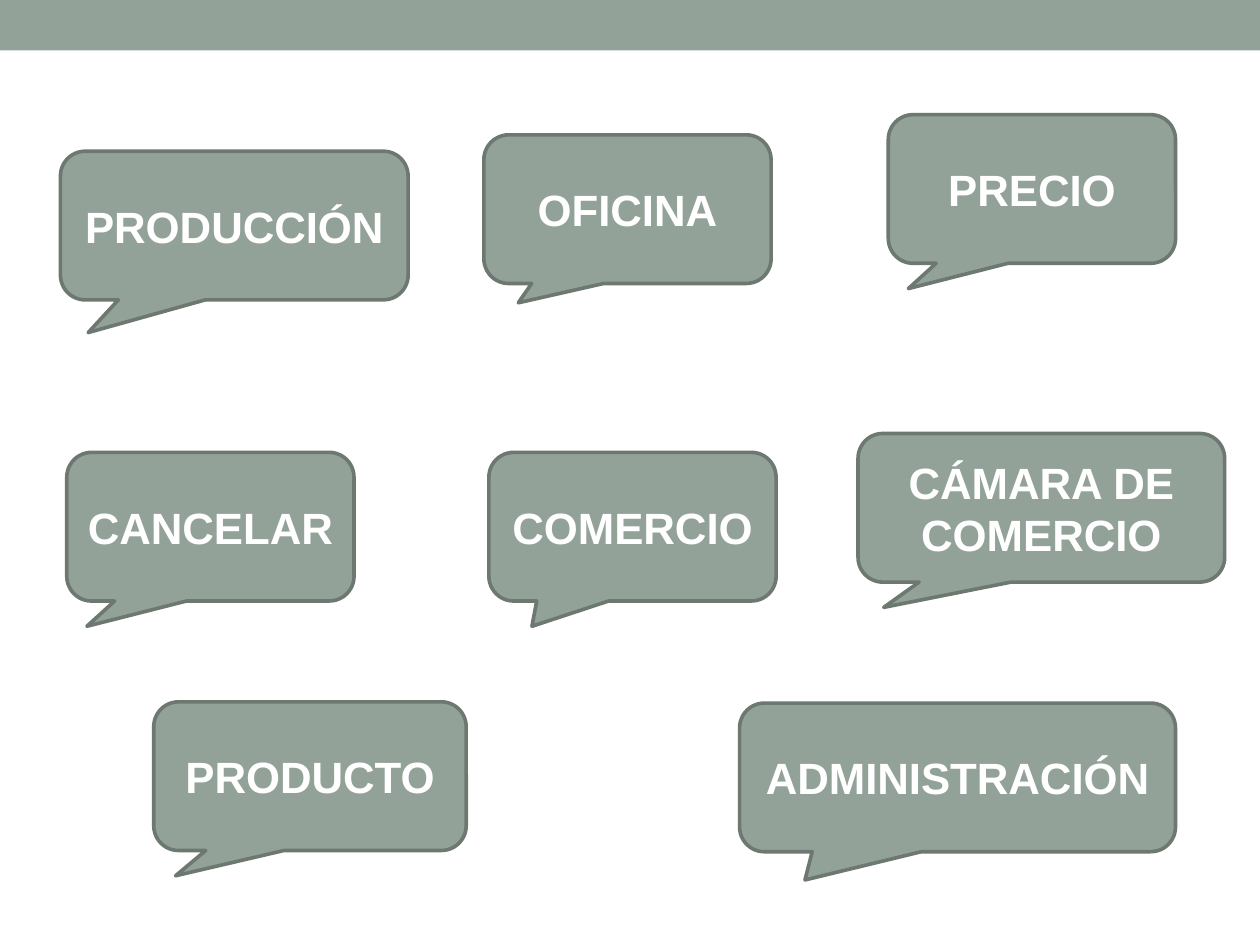
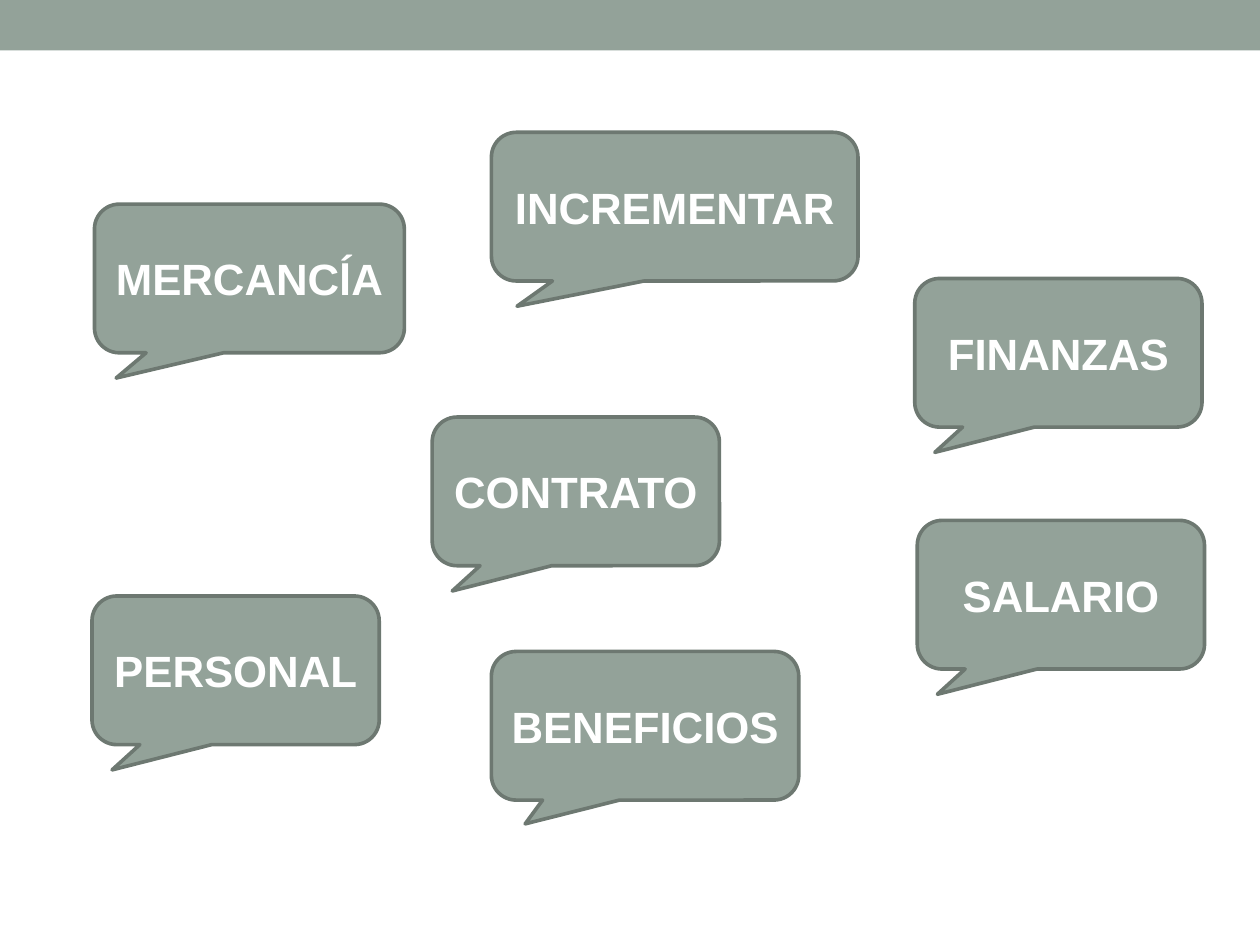
"""Build two vocabulary slides of business words in speech bubbles."""
from pptx import Presentation
from pptx.dml.color import RGBColor
from pptx.enum.shapes import MSO_SHAPE as SHAPE
from pptx.enum.text import MSO_ANCHOR as ANCHOR, PP_ALIGN as ALIGN
from pptx.util import Inches, Pt

SAGE, EDGE, WHITE = "93A299", "6D7871", "FFFFFF"
FONT, WORD_SIZE = "Arial", 25
SLIDE_W, SLIDE_H, BAND_H = 10, 7.5, 0.4
BUBBLE_W, BUBBLE_H = 2.28, 1.18
CORNER = 0.167
TAIL = (-0.43, 0.67)

WORDS_BY_SLIDE = [
    [
        ("PRODUCCIÓN", 0.48, 1.2, 2.76, (-0.42, 0.72)),
        ("CANCELAR", 0.53, 3.59),
        ("COMERCIO", 3.88, 3.59, BUBBLE_W, (-0.35, 0.67)),
        ("PRECIO", 7.05, 0.91),
        ("CÁMARA DE COMERCIO", 6.81, 3.44, 2.91),
        ("PRODUCTO", 1.22, 5.57, 2.48),
        ("OFICINA", 3.84, 1.07, BUBBLE_W, (-0.38, 0.63)),
        ("ADMINISTRACIÓN", 5.87, 5.58, 3.46, (-0.35, 0.69)),
    ],
    [
        ("MERCANCĺA", 0.75, 1.62, 2.46),
        ("INCREMENTAR", 3.9, 1.05, 2.91),
        ("PERSONAL", 0.73, 4.73),
        ("BENEFICIOS", 3.9, 5.17, 2.44, (-0.39, 0.66)),
        ("FINANZAS", 7.26, 2.21),
        ("SALARIO", 7.28, 4.13),
        ("CONTRATO", 3.43, 3.31),
    ],
]


def rgb(value):
    """Return the colour for a hex string."""
    return RGBColor.from_string(value)


def add_filled(s, kind, left, top, width, height):
    """Add a flat sage shape without outline."""
    sp = s.shapes.add_shape(kind, Inches(left), Inches(top), Inches(width), Inches(height))
    sp.shadow.inherit = False
    sp.fill.solid()
    sp.fill.fore_color.rgb = rgb(SAGE)
    sp.line.fill.background()
    return sp


def add_word(sp, word):
    """Write a centred bold word inside a shape."""
    tf = sp.text_frame
    tf.word_wrap = True
    tf.vertical_anchor = ANCHOR.MIDDLE
    tf.margin_left = tf.margin_right = Inches(0.05)
    p = tf.paragraphs[0]
    p.alignment = ALIGN.CENTER
    r = p.add_run()
    r.text = word
    r.font.name = FONT
    r.font.size = Pt(WORD_SIZE)
    r.font.bold = True
    r.font.color.rgb = rgb(WHITE)


def add_bubble(s, word, left, top, width=BUBBLE_W, tail=TAIL):
    """Add a speech bubble whose tail tip is relative to its centre."""
    sp = add_filled(s, SHAPE.ROUNDED_RECTANGULAR_CALLOUT, left, top, width, BUBBLE_H)
    for i, value in enumerate((*tail, CORNER)):
        sp.adjustments[i] = value
    sp.line.color.rgb = rgb(EDGE)
    sp.line.width = Pt(2.08)
    add_word(sp, word)


def add_word_slide(prs, words):
    """Add a slide with the top band and its bubbles."""
    s = prs.slides.add_slide(prs.slide_layouts[6])
    add_filled(s, SHAPE.RECTANGLE, 0, 0, SLIDE_W, BAND_H)
    for bubble in words:
        add_bubble(s, *bubble)


def main():
    """Build and save the presentation."""
    prs = Presentation()
    prs.slide_width, prs.slide_height = Inches(SLIDE_W), Inches(SLIDE_H)
    for words in WORDS_BY_SLIDE:
        add_word_slide(prs, words)
    prs.save("out.pptx")


if __name__ == "__main__":
    main()
